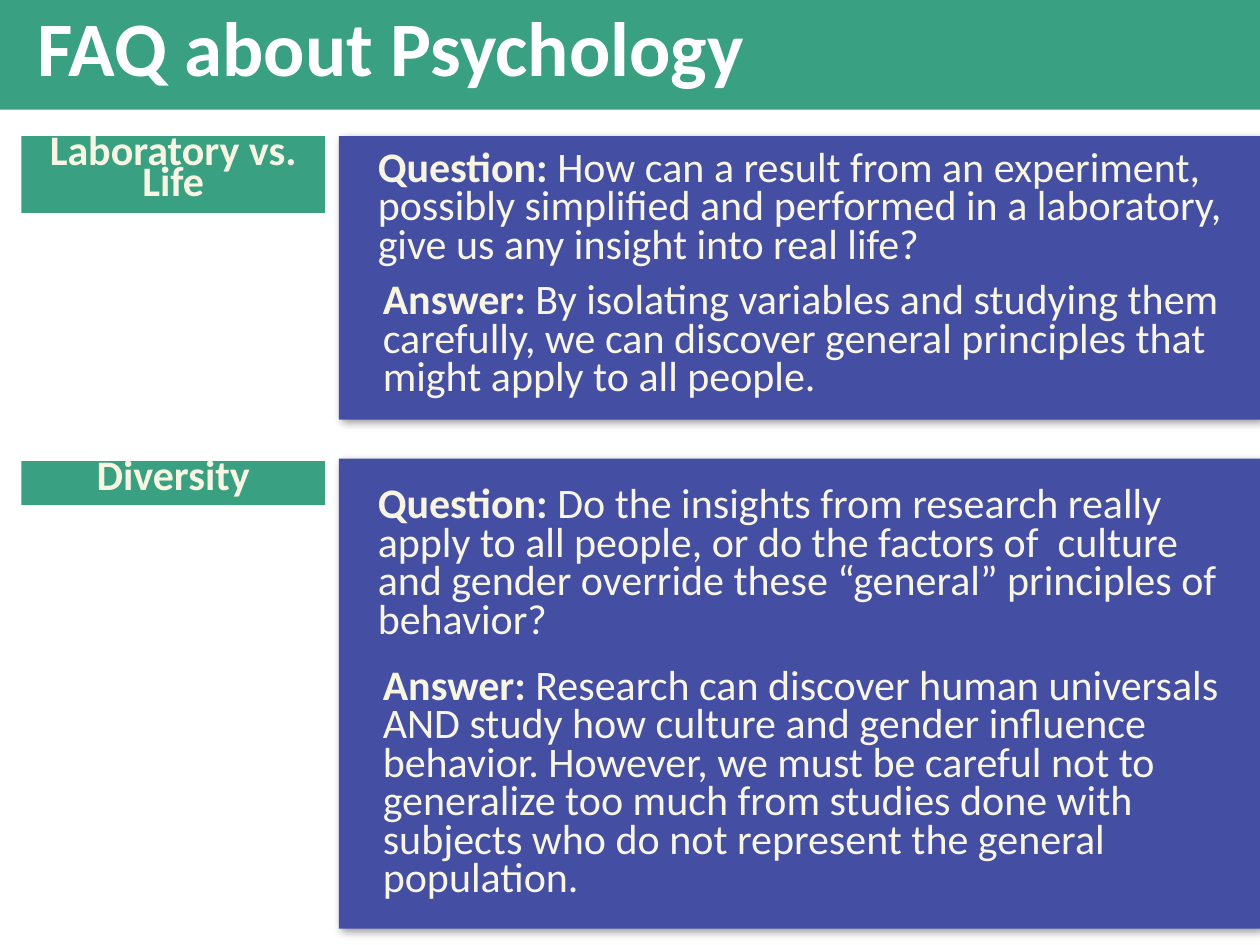
import pptx
import pptx.util
import pptx.dml.color
import pptx.enum.shapes
import pptx.enum.text
import pptx.oxml
import pptx.oxml.ns

COLUMNS, ROWS = 100, 75
GREEN, INDIGO, CREAM, WHITE = "3AA082", "444EA2", "F8F6E3", "FFFFFF"
PANEL_LEFT = 26.9
LABEL_LEFT, LABEL_WIDTH = 1.7, 24.1
PASSAGE_WIDTH, PASSAGE_HEIGHT = 69.4, 12.9
QUESTION_INDENT, ANSWER_INDENT = 2.1, 2.5

deck = pptx.Presentation()
deck.slide_width = pptx.util.Inches(10)
deck.slide_height = pptx.util.Inches(7.5)
slide = deck.slides.add_slide(deck.slide_layouts[5])


def grid(left, top, width, height):
    column, row = deck.slide_width / COLUMNS, deck.slide_height / ROWS
    return [round(n * unit) for n, unit in
            zip((left, top, width, height), (column, row, column, row))]


def colour(hex_string):
    return pptx.dml.color.RGBColor.from_string(hex_string)


def paint(shape, fill):
    shape.fill.solid()
    shape.fill.fore_color.rgb = colour(fill)
    shape.line.fill.background()


def add_block(box, fill):
    block = slide.shapes.add_shape(
        pptx.enum.shapes.MSO_SHAPE.RECTANGLE, *grid(*box))
    paint(block, fill)
    block.shadow.inherit = False
    return block


def cast_shadow(block):
    effects = block._element.spPr.find(pptx.oxml.ns.qn("a:effectLst"))
    effects.append(pptx.oxml.parse_xml(
        f'<a:outerShdw {pptx.oxml.ns.nsdecls("a")} blurRad="63500" '
        'dist="38100" dir="2700000" algn="tl" rotWithShape="0">'
        '<a:srgbClr val="000000"><a:alpha val="40000"/></a:srgbClr>'
        '</a:outerShdw>'))


def style(paragraph, size, spacing, hex_string):
    paragraph.line_spacing = pptx.util.Pt(spacing)
    paragraph.font.size = pptx.util.Pt(size)
    paragraph.font.name = "Calibri"
    paragraph.font.color.rgb = colour(hex_string)


def add_heading(box, wording):
    heading = slide.shapes.title
    heading.left, heading.top, heading.width, heading.height = grid(*box)
    paint(heading, GREEN)
    frame = heading.text_frame
    frame.text = wording
    frame.auto_size = pptx.enum.text.MSO_AUTO_SIZE.NONE
    frame.vertical_anchor = pptx.enum.text.MSO_ANCHOR.MIDDLE
    frame.margin_left = pptx.util.Inches(0.3)
    line = frame.paragraphs[0]
    line.alignment = pptx.enum.text.PP_ALIGN.LEFT
    style(line, 44, 42, WHITE)
    line.font.bold = True


def add_label(box, wording):
    frame = add_block(box, GREEN).text_frame
    frame.text = wording
    frame.word_wrap = True
    frame.auto_size = pptx.enum.text.MSO_AUTO_SIZE.SHAPE_TO_FIT_TEXT
    frame.vertical_anchor = pptx.enum.text.MSO_ANCHOR.TOP
    line = frame.paragraphs[0]
    line.alignment = pptx.enum.text.PP_ALIGN.CENTER
    style(line, 24, 18, CREAM)
    line.font.bold = True


def add_passage(left, top, lead, wording):
    frame = slide.shapes.add_textbox(
        *grid(left, top, PASSAGE_WIDTH, PASSAGE_HEIGHT)).text_frame
    frame.word_wrap = True
    line = frame.paragraphs[0]
    style(line, 24, 22, CREAM)
    for part, bold in ((f"{lead}: ", True), (wording, False)):
        run = line.add_run()
        run.text = part
        run.font.bold = bold


def add_topic(top, height, label, label_drop, label_height,
              question, question_drop, answer, answer_drop):
    cast_shadow(add_block(
        (PANEL_LEFT, top, COLUMNS - PANEL_LEFT, height), INDIGO))
    add_label((LABEL_LEFT, top + label_drop, LABEL_WIDTH, label_height), label)
    add_passage(PANEL_LEFT + QUESTION_INDENT, top + question_drop,
                "Question", question)
    add_passage(PANEL_LEFT + ANSWER_INDENT, top + answer_drop,
                "Answer", answer)


add_heading((0, 0, COLUMNS, 8.7), "FAQ about Psychology")
add_topic(
    top=10.8, height=22.5,
    label="Laboratory vs. Life", label_drop=0, label_height=6.1,
    question="How can a result from an experiment, possibly simplified and "
             "performed in a laboratory, give us any insight into real life?",
    question_drop=0.8,
    answer="By isolating variables and studying them carefully, we can "
           "discover general principles that might apply to all people.",
    answer_drop=11.3)
add_topic(
    top=36.4, height=37.3,
    label="Diversity", label_drop=0.2, label_height=3.5,
    question="Do the insights from research really apply to all people, or do "
             "the factors of  culture and gender override these “general” "
             "principles of behavior?",
    question_drop=1.9,
    answer="Research can discover human universals AND study how culture and "
           "gender influence behavior. However, we must be careful not to "
           "generalize too much from studies done with subjects who do not "
           "represent the general population.",
    answer_drop=16.3)

deck.save("out.pptx")
